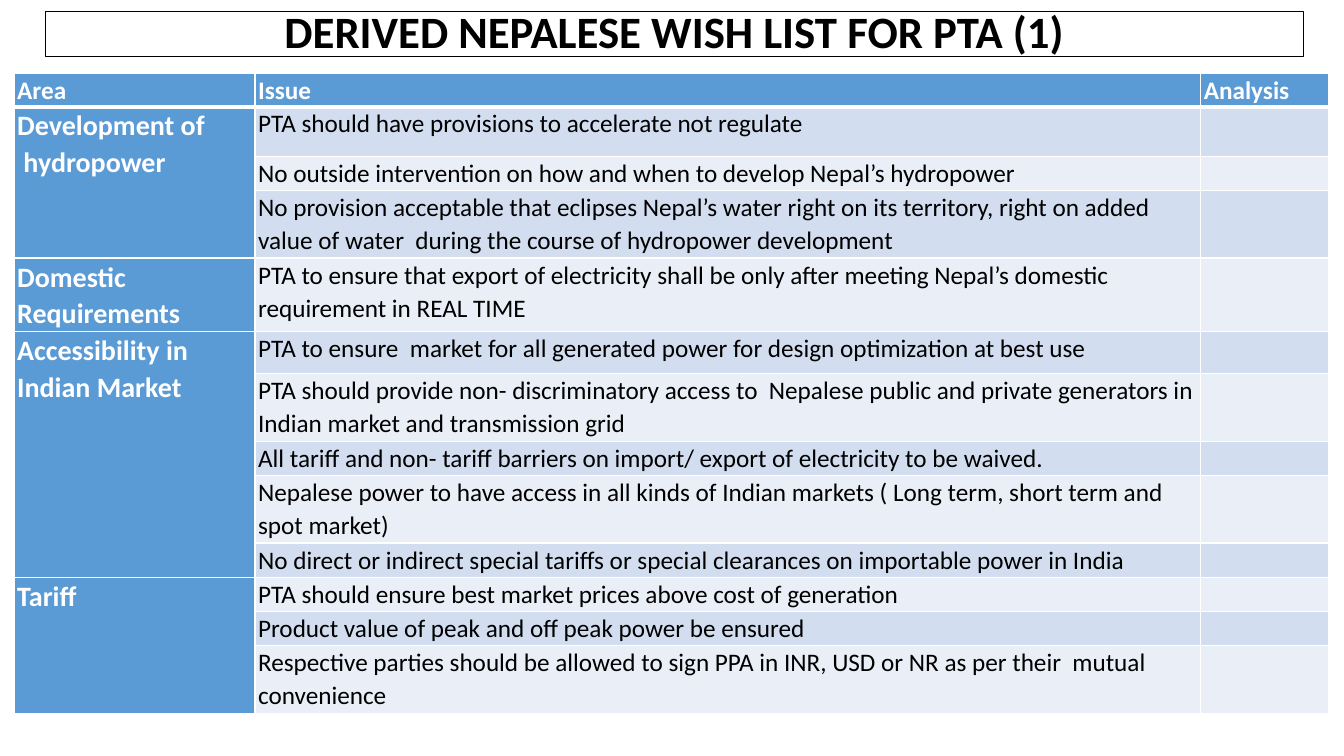
from lxml import etree
from pptx import Presentation
from pptx import util as u
from pptx.dml import color
from pptx.enum import text
from pptx.oxml import ns

WIDTH, HEIGHT = 13.33, 7.5
FONT = "Calibri"
BLUE, PALE, PALER = "5B9BD5", "D2DEEF", "EAEFF7"
WHITE, BLACK = "FFFFFF", "000000"

HEADINGS = ["Area", "Issue", "Analysis"]
COLUMNS = [2.39, 9.38, 1.27]
HEADER_ROW = 0.33
AREAS = [
    (["Development of", " hydropower"], [
        (0.49, "PTA should have provisions to accelerate not regulate"),
        (0.34, "No outside intervention on how and when to develop Nepal’s hydropower"),
        (0.67, "No provision acceptable that eclipses Nepal’s water right on its territory, "
               "right on added value of water  during the course of hydropower development"),
    ]),
    (["Domestic", "Requirements"], [
        (0.73, "PTA to ensure that export of electricity shall be only after meeting "
               "Nepal’s domestic requirement in REAL TIME"),
    ]),
    (["Accessibility in", "Indian Market"], [
        (0.42, "PTA to ensure  market for all generated power for design optimization at best use"),
        (0.67, "PTA should provide non- discriminatory access to  Nepalese public and private "
               "generators in Indian market and transmission grid"),
        (0.34, "All tariff and non- tariff barriers on import/ export of electricity to be waived."),
        (0.67, "Nepalese power to have access in all kinds of Indian markets "
               "( Long term, short term and spot market)"),
        (0.34, "No direct or indirect special tariffs or special clearances on importable power in India"),
    ]),
    (["Tariff"], [
        (0.34, "PTA should ensure best market prices above cost of generation"),
        (0.34, "Product value of peak and off peak power be ensured"),
        (0.67, "Respective parties should be allowed to sign PPA in INR, USD or NR "
               "as per their  mutual convenience"),
    ]),
]


def rgb(value):
    return color.RGBColor.from_string(value)


def write(frame, lines, size=18, ink=BLACK, bold=False, align=None, spacing=1.07):
    for index, line in enumerate(lines):
        para = frame.paragraphs[0] if index == 0 else frame.add_paragraph()
        para.line_spacing = spacing
        para.alignment = align
        para.font.size = u.Pt(size)
        if line:
            span = para.add_run()
            span.text = line
            span.font.name = FONT
            span.font.size = u.Pt(size)
            span.font.bold = bold
            span.font.color.rgb = rgb(ink)


def add_borders(cell, top=1, bottom=1):
    properties = cell._tc.get_or_add_tcPr()
    for side, points in (("L", 1), ("R", 1), ("T", top), ("B", bottom)):
        line = etree.SubElement(properties, ns.qn("a:ln" + side), w=str(u.Pt(points)))
        fill = etree.SubElement(line, ns.qn("a:solidFill"))
        etree.SubElement(fill, ns.qn("a:srgbClr"), val=WHITE)


def style_cell(cell, lines, fill, top=1, bottom=1, **style):
    cell.margin_left = cell.margin_right = u.Inches(0.03)
    cell.margin_top = cell.margin_bottom = 0
    add_borders(cell, top, bottom)
    cell.fill.solid()
    cell.fill.fore_color.rgb = rgb(fill)
    write(cell.text_frame, lines, **style)


def add_title(page, left, top, width, height):
    box = page.shapes.add_textbox(*map(u.Inches, (left, top, width, height)))
    box.line.color.rgb = rgb(BLACK)
    box.line.width = u.Pt(0.5)
    frame = box.text_frame
    frame.word_wrap = True
    frame.margin_top = frame.margin_bottom = 0
    frame.vertical_anchor = text.MSO_ANCHOR.MIDDLE
    write(frame, ["DERIVED NEPALESE WISH LIST FOR PTA (1)"], size=32, bold=True,
          align=text.PP_ALIGN.CENTER, spacing=0.9)


def add_wish_list(page, left, top):
    heights = [HEADER_ROW] + [height for _, issues in AREAS for height, _ in issues]
    box = page.shapes.add_table(len(heights), len(COLUMNS), *map(
        u.Inches, (left, top, sum(COLUMNS), sum(heights))))
    table = box.table
    for column, width in zip(table.columns, COLUMNS):
        column.width = u.Inches(width)
    for row, height in zip(table.rows, heights):
        row.height = u.Inches(height)
    for index, heading in enumerate(HEADINGS):
        style_cell(table.cell(0, index), [heading], BLUE, bottom=3, ink=WHITE, bold=True)

    row = 1
    for area, issues in AREAS:
        first = row
        for _, issue in issues:
            edge = 3 if row == 1 else 1
            band = PALE if row % 2 else PALER
            style_cell(table.cell(row, 0), area if row == first else [""], BLUE,
                       top=edge, size=20, ink=WHITE, bold=True)
            style_cell(table.cell(row, 1), [issue], band, top=edge)
            style_cell(table.cell(row, 2), [""], band, top=edge)
            row += 1
        if len(issues) > 1:
            table.cell(first, 0).merge(table.cell(row - 1, 0))


def main():
    deck = Presentation()
    deck.slide_width, deck.slide_height = u.Inches(WIDTH), u.Inches(HEIGHT)
    page = deck.slides.add_slide(deck.slide_layouts[6])
    add_title(page, 0.45, 0.11, 12.48, 0.45)
    add_wish_list(page, 0.14, 0.73)
    deck.save("out.pptx")


if __name__ == "__main__":
    main()
